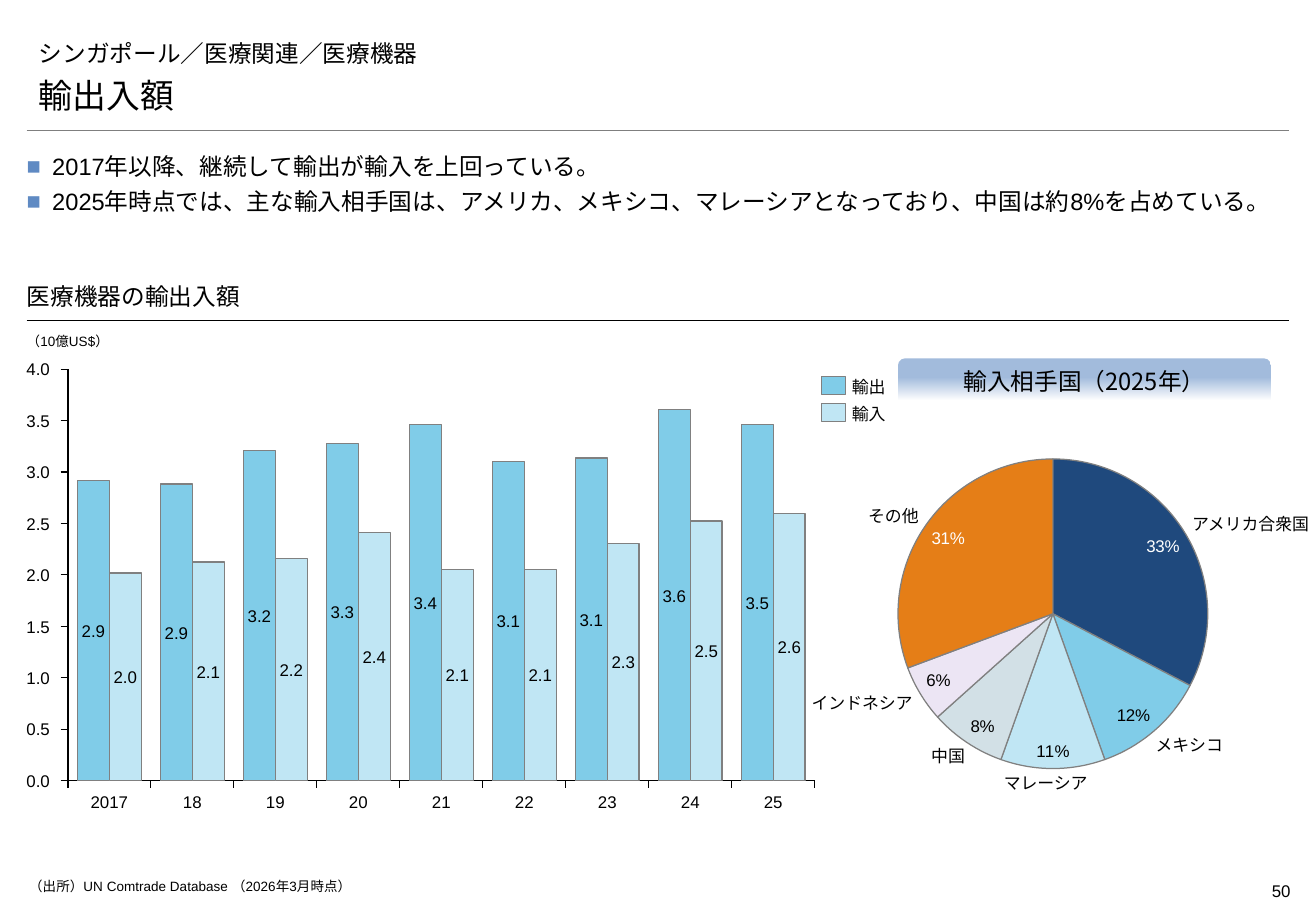
from lxml import etree
from pptx import Presentation
from pptx.chart.data import CategoryChartData
from pptx.dml.color import RGBColor
from pptx.enum.chart import XL_CHART_TYPE, XL_LABEL_POSITION, XL_TICK_LABEL_POSITION, XL_TICK_MARK
from pptx.enum.lang import MSO_LANGUAGE_ID
from pptx.enum.shapes import MSO_CONNECTOR, MSO_SHAPE
from pptx.enum.text import MSO_ANCHOR, PP_ALIGN
from pptx.oxml import parse_xml
from pptx.oxml.ns import nsdecls, qn
from pptx.util import Inches, Pt

COLS, ROWS = 108.3, 75
LEFT, WIDTH, LABEL_H = 2.2, 103.9, 1.7

BLACK = RGBColor(0x00, 0x00, 0x00)
WHITE = RGBColor(0xFF, 0xFF, 0xFF)
RULE_GREY = RGBColor(0x7F, 0x7F, 0x7F)
EDGE_GREY = RGBColor(0x80, 0x80, 0x80)
BULLET_BLUE = RGBColor(0x5F, 0x8A, 0xC3)
BANNER_BLUE = RGBColor(0xA2, 0xBB, 0xDC)
NAVY = RGBColor(0x1F, 0x49, 0x7D)
SKY = RGBColor(0x80, 0xCC, 0xE8)
PALE_SKY = RGBColor(0xC0, 0xE6, 0xF4)
MIST = RGBColor(0xD2, 0xE0, 0xE6)
LILAC = RGBColor(0xEC, 0xE5, 0xF4)
ORANGE = RGBColor(0xE5, 0x7E, 0x17)

YEARS = ["2017", "18", "19", "20", "21", "22", "23", "24", "25"]
TRADE = [
    ("輸出", SKY, [81, 80, 89, 91, 96, 86, 87, 100, 96],
     ["2.9", "2.9", "3.2", "3.3", "3.4", "3.1", "3.1", "3.6", "3.5"]),
    ("輸入", PALE_SKY, [56, 59, 60, 67, 57, 57, 64, 70, 72],
     ["2.0", "2.1", "2.2", "2.4", "2.1", "2.1", "2.3", "2.5", "2.6"]),
]
AXIS_MAX, AXIS_STEPS, GAP = 111, 8, 60
BAR_FRAME = (4.7, 29.5, 63.3, 35.7)
BAR_PLOT = (0.014, 0.025, 0.971, 0.949)
PARTNERS = [
    ("アメリカ合衆国", 33, NAVY, WHITE, (98.1, 42.3, 10.1), PP_ALIGN.LEFT),
    ("メキシコ", 12, SKY, BLACK, (95.1, 60.5, 6.5), PP_ALIGN.LEFT),
    ("マレーシア", 11, PALE_SKY, BLACK, (81.5, 63.6, 8), PP_ALIGN.RIGHT),
    ("中国", 8, MIST, BLACK, (75.9, 61.4, 3.5), PP_ALIGN.RIGHT),
    ("インドネシア", 6, LILAC, BLACK, (66.1, 57, 9), PP_ALIGN.RIGHT),
    ("その他", 31, ORANGE, WHITE, (70.6, 41.6, 5), PP_ALIGN.RIGHT),
]
POINTS = [
    "2017年以降、継続して輸出が輸入を上回っている。",
    "2025年時点では、主な輸入相手国は、アメリカ、メキシコ、マレーシアとなっており、中国は約8%を占めている。",
]


def cells(*counts):
    """Turn counts of grid columns or rows into lengths."""
    return [Inches(n / 10) for n in counts]


def add_run(p, text, size, font="Arial"):
    """Add one black run to a paragraph."""
    r = p.add_run()
    r.text = text
    r.font.size, r.font.name = Pt(size), font
    r.font.color.rgb = BLACK
    r.font.language_id = MSO_LANGUAGE_ID.JAPANESE
    rPr = r._r.get_or_add_rPr()
    ea = etree.Element(qn("a:ea"), typeface="Noto Sans CJK JP")
    rPr.find(qn("a:latin")).addnext(ea)


def add_text(s, box, text, size=10, font="Arial", align=PP_ALIGN.LEFT,
             anchor=MSO_ANCHOR.MIDDLE, insets=(0, 0, 0, 0), wrap=False):
    """Add a one-paragraph text box."""
    tf = s.shapes.add_textbox(*cells(*box)).text_frame
    tf.word_wrap, tf.vertical_anchor = wrap, anchor
    tf.margin_left, tf.margin_top, tf.margin_right, tf.margin_bottom = cells(*insets)
    p = tf.paragraphs[0]
    p.alignment = align
    add_run(p, text, size, font)


def add_rule(s, row, color, width):
    """Draw a horizontal line across the content width."""
    sp = s.shapes.add_connector(
        MSO_CONNECTOR.STRAIGHT, *cells(LEFT, row, LEFT + WIDTH, row))
    sp.line.color.rgb, sp.line.width = color, Pt(width)
    etree.SubElement(sp._element.spPr, qn("a:effectLst"))


def add_points(s, box, texts):
    """Add the square-bulleted summary."""
    tf = s.shapes.add_textbox(*cells(*box)).text_frame
    tf.word_wrap = True
    tf.margin_left = tf.margin_top = tf.margin_right = tf.margin_bottom = 0
    for i, text in enumerate(texts):
        p = tf.add_paragraph() if i else tf.paragraphs[0]
        pPr = p._p.get_or_add_pPr()
        pPr.set("marL", str(Inches(0.21)))
        pPr.set("indent", str(-Inches(0.21)))
        color = etree.SubElement(pPr, qn("a:buClr"))
        etree.SubElement(color, qn("a:srgbClr"), val=str(BULLET_BLUE))
        etree.SubElement(pPr, qn("a:buFont"), typeface="Arial")
        etree.SubElement(pPr, qn("a:buChar"), char="■")
        p.alignment, p.line_spacing, p.space_after = PP_ALIGN.JUSTIFY, 1.1, Pt(2)
        add_run(p, text, 14)


def add_banner(s, box, text):
    """Add the fading heading above the pie."""
    sp = s.shapes.add_shape(MSO_SHAPE.ROUND_2_SAME_RECTANGLE, *cells(*box))
    sp.shadow.inherit = False
    sp.line.fill.background()
    sp.fill.gradient()
    sp.fill.gradient_angle = 270
    for stop, color, pos in zip(sp.fill.gradient_stops, (BANNER_BLUE, WHITE), (0.45, 1)):
        stop.color.rgb, stop.position = color, pos
    tf = sp.text_frame
    tf.vertical_anchor = MSO_ANCHOR.MIDDLE
    p = tf.paragraphs[0]
    p.alignment = PP_ALIGN.CENTER
    add_run(p, text, 14, "Noto Sans CJK JP")


def add_chart(s, kind, frame, plot, data):
    """Add a bare chart whose plot fills the given shares of its frame."""
    chart = s.shapes.add_chart(kind, *cells(*frame), data).chart
    chart.has_legend = chart.has_title = False
    chart.font.size, chart.font.name = Pt(10), "Arial"
    chart.font.color.rgb = BLACK
    area = chart._chartSpace.chart.plotArea
    for old in area.findall(qn("c:layout")):
        area.remove(old)
    sizes = "".join(f'<c:{k} val="{v}"/>' for k, v in zip("xywh", plot))
    area.insert(0, parse_xml(
        f'<c:layout {nsdecls("c")}><c:manualLayout><c:layoutTarget val="inner"/>'
        f'<c:xMode val="edge"/><c:yMode val="edge"/>{sizes}</c:manualLayout></c:layout>'))
    return chart


def paint(fmt, color):
    """Fill a chart element or shape and give it a thin grey edge."""
    fmt.fill.solid()
    fmt.fill.fore_color.rgb = color
    fmt.line.color.rgb, fmt.line.width = EDGE_GREY, Pt(0.75)


def add_trade_chart(s):
    """Add the export and import columns with their labels."""
    data = CategoryChartData()
    data.categories = YEARS
    for name, _, heights, _ in TRADE:
        data.add_series(name, heights)
    chart = add_chart(s, XL_CHART_TYPE.COLUMN_CLUSTERED, BAR_FRAME, BAR_PLOT, data)
    chart.plots[0].gap_width, chart.plots[0].overlap = GAP, 0
    chart.plots[0].vary_by_categories = False
    for axis in (chart.category_axis, chart.value_axis):
        axis.has_major_gridlines = False
        axis.major_tick_mark = XL_TICK_MARK.OUTSIDE
        axis.tick_label_position = XL_TICK_LABEL_POSITION.NONE
        axis.format.line.color.rgb, axis.format.line.width = BLACK, Pt(0.75)
    axis.minimum_scale, axis.maximum_scale = 0, AXIS_MAX
    axis.major_unit = AXIS_MAX / AXIS_STEPS

    x, y, w, h = BAR_FRAME
    left, height = x + BAR_PLOT[0] * w, BAR_PLOT[3] * h
    base = y + BAR_PLOT[1] * h + height
    slot = BAR_PLOT[2] * w / len(YEARS)
    bar = slot / (len(TRADE) + GAP / 100)
    for i in range(AXIS_STEPS + 1):
        row = base - height * i / AXIS_STEPS - LABEL_H / 2
        add_text(s, (0.6, row, 3.5, LABEL_H), f"{i / 2:.1f}", align=PP_ALIGN.RIGHT)
    for i, year in enumerate(YEARS):
        add_text(s, (left + (i + 0.5) * slot - 2, 65.2, 4, LABEL_H), year,
                 align=PP_ALIGN.CENTER, anchor=MSO_ANCHOR.TOP)
    for k, (name, color, heights, labels) in enumerate(TRADE):
        paint(chart.series[k].format, color)
        for i, (value, label) in enumerate(zip(heights, labels)):
            col = left + (i + 0.5) * slot + (k - 0.5) * bar - 1.3
            row = base - height * value / AXIS_MAX / 2 - LABEL_H / 2
            add_text(s, (col, row, 2.6, LABEL_H), label, align=PP_ALIGN.CENTER)
        row = 31 + 2.2 * k
        sp = s.shapes.add_shape(MSO_SHAPE.RECTANGLE, *cells(67.6, row, 2, 1.5))
        sp.shadow.inherit = False
        paint(sp, color)
        add_text(s, (70.1, row, 3.5, LABEL_H), name)


def add_partner_chart(s):
    """Add the pie of import partners with country names."""
    data = CategoryChartData(number_format='0"%"')
    data.categories = [partner[0] for partner in PARTNERS]
    data.add_series("輸入相手国", [partner[1] for partner in PARTNERS])
    chart = add_chart(s, XL_CHART_TYPE.PIE, (73, 34.4, 27.3, 32.3),
                      (0.033, 0.104, 0.934, 0.791), data)
    for i, (name, _, color, ink, (col, row, width), align) in enumerate(PARTNERS):
        point = chart.series[0].points[i]
        paint(point.format, color)
        label = point.data_label
        label.font.size, label.font.name = Pt(10), "Arial"
        label.font.color.rgb = ink
        label.position = XL_LABEL_POSITION.INSIDE_END
        add_text(s, (col, row, width, LABEL_H), name, align=align)


def main():
    """Build the slide and save it."""
    prs = Presentation()
    prs.slide_width, prs.slide_height = cells(COLS, ROWS)
    s = prs.slides.add_slide(prs.slide_layouts[6])
    bottom = {"anchor": MSO_ANCHOR.BOTTOM, "font": "Montserrat", "wrap": True}
    add_rule(s, 10.7, RULE_GREY, 0.25)
    add_text(s, (LEFT, 2.6, WIDTH, 3.4), "シンガポール／医療関連／医療機器", 14,
             insets=(1, 0.5, 1, 0.5), **bottom)
    add_text(s, (LEFT, 5.6, WIDTH, 4.4), "輸出入額", 20, insets=(1, 0.5, 1, 0.5), **bottom)
    add_points(s, (LEFT, 12.3, WIDTH, 5.2), POINTS)
    add_text(s, (LEFT, 23.2, WIDTH, 3.1), "医療機器の輸出入額", 14,
             insets=(0, 0.5, 0, 0.8), **bottom)
    add_rule(s, 26.4, BLACK, 0.75)
    add_text(s, (LEFT, 26.9, 7.5, 2.4), "（10億US$）", 8, wrap=True)
    add_banner(s, (73.9, 29.5, 30.7, 3.5), "輸入相手国（2025年）")
    add_partner_chart(s)
    add_trade_chart(s)
    add_text(s, (2.4, 72.3, 74.8, 2.4), "（出所）UN Comtrade Database （2026年3月時点）", 8,
             anchor=MSO_ANCHOR.TOP, wrap=True)
    add_text(s, (98.3, 72, 7.9, 2.7), "50", align=PP_ALIGN.RIGHT,
             anchor=MSO_ANCHOR.TOP, insets=(0, 0.5, 0, 0.5), wrap=True)
    prs.save("out.pptx")


if __name__ == "__main__":
    main()
